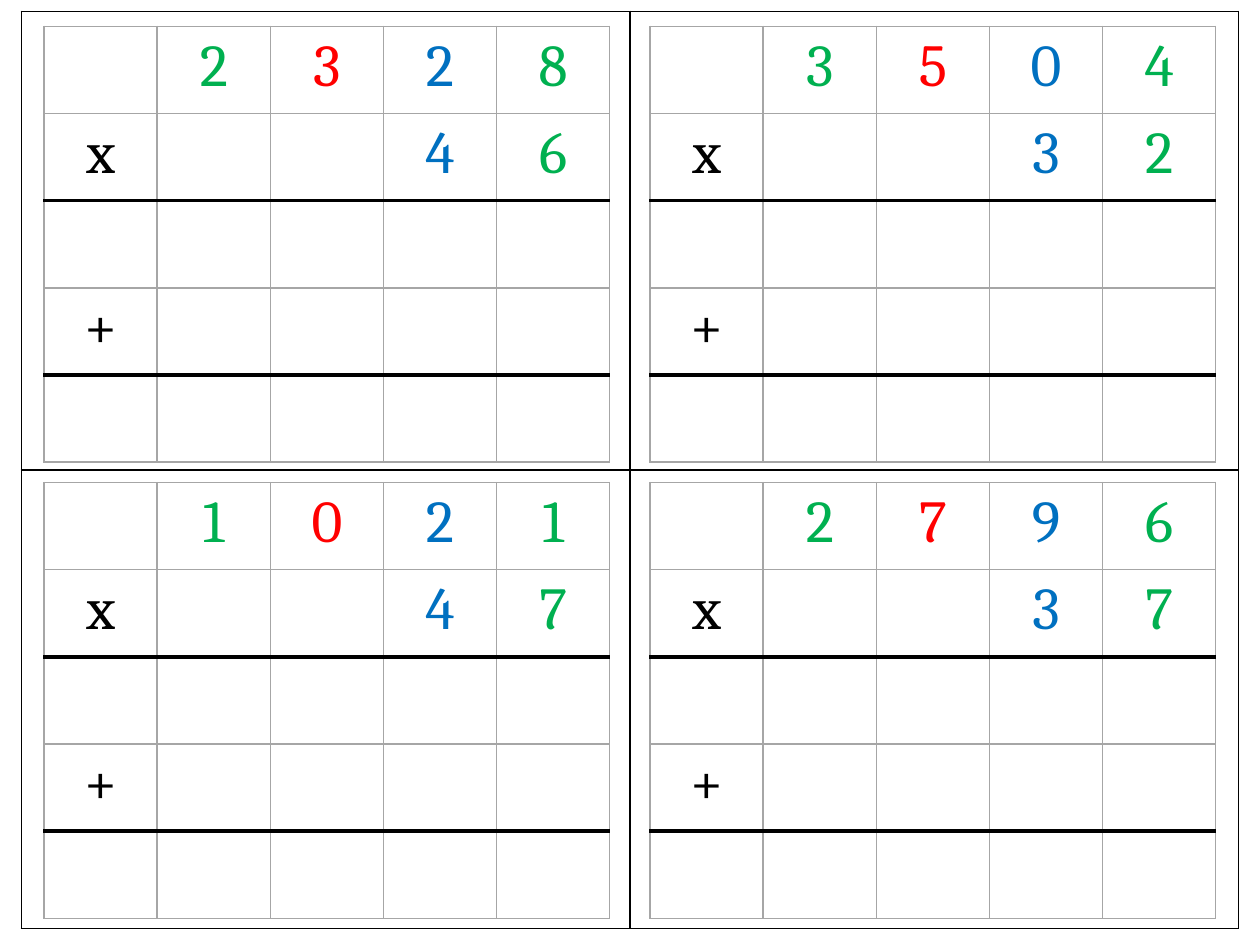
from dataclasses import dataclass

from lxml import etree
from pptx import Presentation
from pptx.dml.color import RGBColor
from pptx.enum.text import PP_ALIGN
from pptx.oxml.ns import qn
from pptx.table import Table, _Cell
from pptx.util import Inches, Pt

CENTER = PP_ALIGN.CENTER

BLACK = RGBColor(0x00, 0x00, 0x00)
WHITE = RGBColor(0xFF, 0xFF, 0xFF)
GREY = RGBColor(0xA6, 0xA6, 0xA6)
GREEN = RGBColor(0x00, 0xB0, 0x50)
RED = RGBColor(0xFF, 0x00, 0x00)
BLUE = RGBColor(0x00, 0x70, 0xC0)

FONT = "Cambria"
SIZE = Pt(34)
COUNT = 5  # rows and columns of a sum
INKS = (BLACK, GREEN, RED, BLUE, GREEN)  # one per column


@dataclass(frozen=True)
class Rule:
    color: RGBColor
    width: float


@dataclass(frozen=True)
class Sum:
    left: float
    top: float
    upper: str
    lower: str


FRAME = Rule(BLACK, 1)
THIN = Rule(GREY, 1)
HEAVY = Rule(BLACK, 2.25)

LEFTS = (0.35, 5.16)
TOPS = (0.21, 3.83)
SUMS = (
    Sum(LEFTS[0], TOPS[0], "2328", "46"),
    Sum(LEFTS[1], TOPS[0], "3504", "32"),
    Sum(LEFTS[0], TOPS[1], "1021", "47"),
    Sum(LEFTS[1], TOPS[1], "2796", "37"),
)


def add_grid(slide, count: int, left: float, top: float,
             width: float, height: float) -> Table:
    """Add a square, plain table with equal rows and columns."""
    box = (Inches(left), Inches(top), Inches(width), Inches(height))
    grid = slide.shapes.add_table(count, count, *box).table
    grid.first_row = False
    grid.horz_banding = False
    return grid


def style_cell(cell: _Cell, side: Rule, top: Rule, bottom: Rule) -> None:
    """Set the four borders, then the fill that must follow them."""
    props = cell._tc.get_or_add_tcPr()
    edges = {"a:lnL": side, "a:lnR": side, "a:lnT": top, "a:lnB": bottom}
    for tag, rule in edges.items():
        line = etree.SubElement(props, qn(tag), w=str(Pt(rule.width)))
        fill = etree.SubElement(line, qn("a:solidFill"))
        etree.SubElement(fill, qn("a:srgbClr"), val=str(rule.color))
    cell.fill.solid()
    cell.fill.fore_color.rgb = WHITE


def write(cell: _Cell, text: str, color: RGBColor) -> None:
    para = cell.text_frame.paragraphs[0]
    para.alignment = CENTER
    run = para.add_run()
    run.text = text
    run.font.name = FONT
    run.font.size = SIZE
    run.font.color.rgb = color


def draw_sum(slide, item: Sum) -> None:
    grid = add_grid(slide, COUNT, item.left, item.top, 4.49, 3.46)
    # Operators in the first column, digits aligned to the right
    lines = (item.upper.rjust(COUNT), "x" + item.lower.rjust(COUNT - 1),
             "", "+", "")
    # Heavy rules sit above the working rows and above the answer
    rules = (THIN, THIN, HEAVY, THIN, HEAVY, THIN)
    for row, line in enumerate(lines):
        for col in range(COUNT):
            style_cell(grid.cell(row, col), THIN, rules[row], rules[row + 1])
        for col, char in enumerate(line):
            if char != " ":
                write(grid.cell(row, col), char, INKS[col])


def main() -> None:
    deck = Presentation()
    deck.slide_width = Inches(10)
    deck.slide_height = Inches(7.5)
    slide = deck.slides.add_slide(deck.slide_layouts[6])

    # Outer frame with four panels
    frame = add_grid(slide, 2, 0.17, 0.09, 9.66, 7.28)
    for cell in frame.iter_cells():
        style_cell(cell, FRAME, FRAME, FRAME)

    # One sum per panel
    for item in SUMS:
        draw_sum(slide, item)

    deck.save("out.pptx")


if __name__ == "__main__":
    main()
